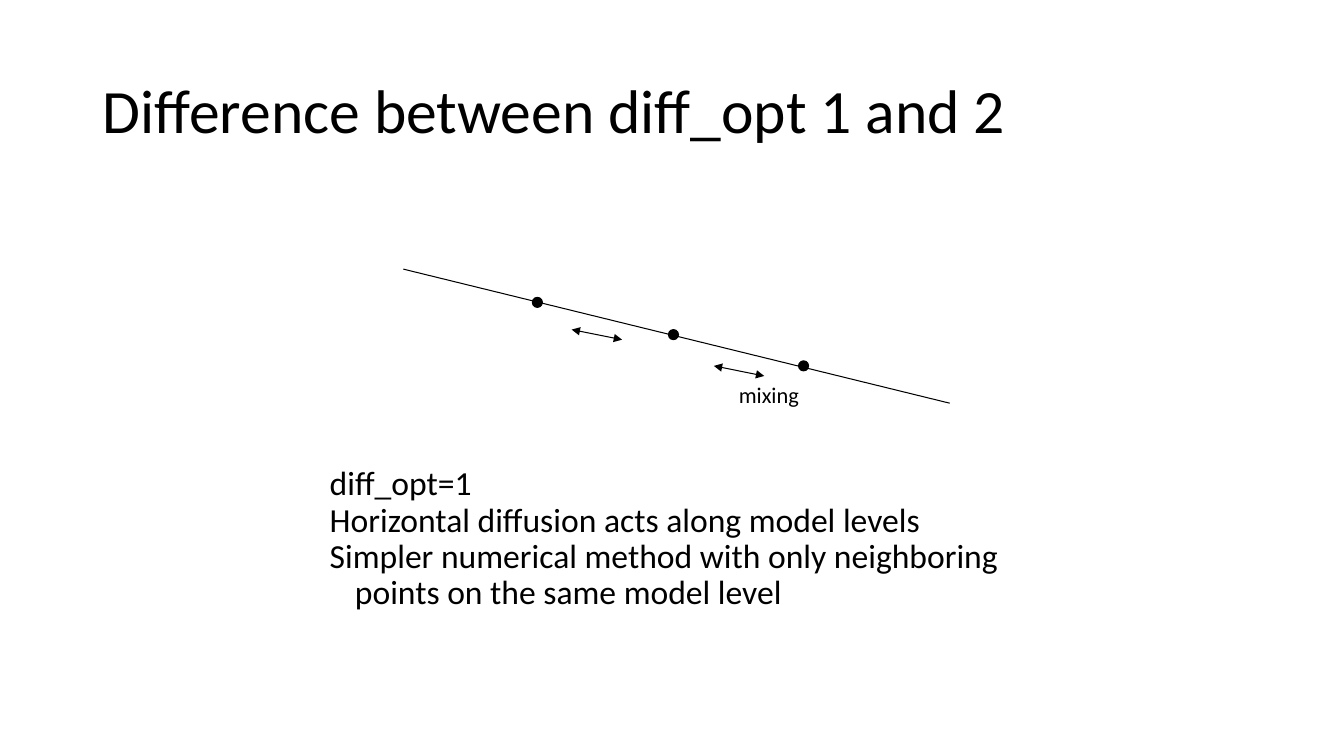
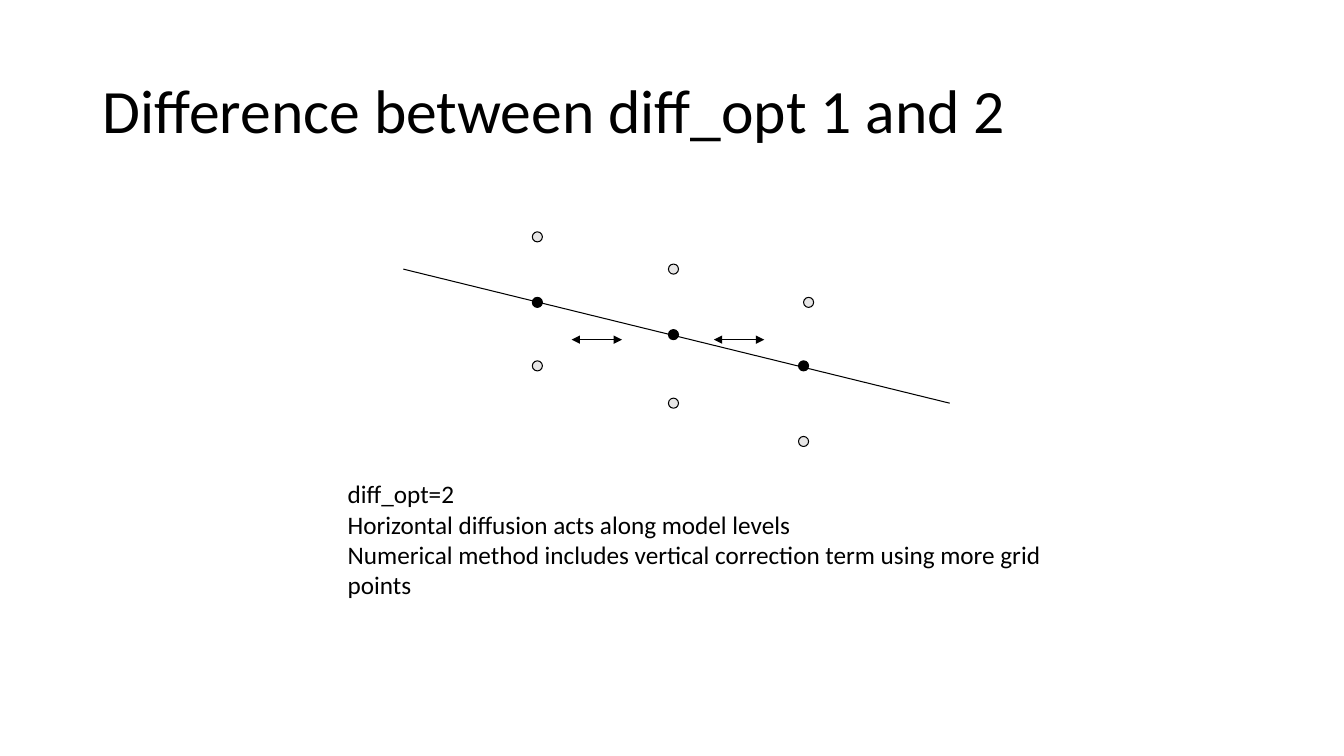
from dataclasses import dataclass

from lxml import etree
from pptx import Presentation, util as u
from pptx.dml.color import RGBColor
from pptx.enum import shapes, text
from pptx.oxml.ns import qn

PX = 9144  # EMU in one px, 100 px to the inch


@dataclass(frozen=True)
class Theme:
    font: str = "Calibri"
    ink: str = "000000"
    pale: str = "E7E6E6"
    title: int = 44
    body: int = 24
    note: int = 18
    label: int = 16
    line: float = 0.75
    tight: float = 0.9
    indent: int = 25


THEME = Theme()

# Content
TITLE = "Difference between diff_opt 1 and 2"
TITLE_BOX = (92, 40, 1150, 145)
LEVEL_LINE = (400, 267, 942, 400)
DOT = 10
LEVEL_POINTS = [(533, 300), (668, 332), (797, 363)]  # centres
EXTRA_POINTS = [(533, 235), (668, 267), (802, 300),
                (533, 363), (668, 400), (797, 438)]
ARROW_LEFTS, ARROW_WIDTH = (567, 708), 50

SLIDES = [
    dict(layout=1, arrow_tops=(327, 363), arrow_drop=10, extra=[],
         box=(317, 458, 767, 208),
         lines=["diff_opt=1",
                "Horizontal diffusion acts along model levels",
                "Simpler numerical method with only neighboring points "
                "on the same model level"],
         label=("mixing", (723, 373, 80, 37))),
    dict(layout=5, arrow_tops=(337, 337), arrow_drop=0, extra=EXTRA_POINTS,
         box=(335, 470, 769, 131),
         lines=["diff_opt=2",
                "Horizontal diffusion acts along model levels",
                "Numerical method includes vertical correction term "
                "using more grid points"],
         label=None),
]


def px(values):
    return [u.Emu(value * PX) for value in values]


def place(shape, box):
    shape.left, shape.top, shape.width, shape.height = px(box)
    return shape


def write(shape, lines, size, spacing=None, hanging=0, wrap=True,
          anchor=text.MSO_ANCHOR.TOP, fit=text.MSO_AUTO_SIZE.NONE):
    frame = shape.text_frame
    frame.word_wrap, frame.vertical_anchor, frame.auto_size = wrap, anchor, fit
    for number, line in enumerate(lines):
        para = frame.add_paragraph() if number else frame.paragraphs[0]
        para.alignment = text.PP_ALIGN.LEFT
        para.space_before = u.Pt(0)
        if spacing:
            para.line_spacing = spacing
        if hanging:
            props = para._p.get_or_add_pPr()
            props.set("marL", str(hanging * PX))
            props.set("indent", str(-hanging * PX))
            etree.SubElement(props, qn("a:buNone"))
        span = para.add_run()
        span.text = line
        span.font.name, span.font.size = THEME.font, u.Pt(size)
        span.font.color.rgb = RGBColor.from_string(THEME.ink)


def outline(shape):
    shape.line.color.rgb = RGBColor.from_string(THEME.ink)
    shape.line.width = u.Pt(THEME.line)


def add_line(slide, ends, arrows=False):
    line = slide.shapes.add_connector(shapes.MSO_CONNECTOR.STRAIGHT, *px(ends))
    outline(line)
    if arrows:
        for tag in ("a:headEnd", "a:tailEnd"):
            etree.SubElement(line.line._get_or_add_ln(), qn(tag), type="triangle")
    etree.SubElement(line._element.spPr, qn("a:effectLst"))


def add_dot(slide, centre, color):
    x, y = centre
    dot = slide.shapes.add_shape(
        shapes.MSO_SHAPE.OVAL, *px((x - DOT // 2, y - DOT // 2, DOT, DOT)))
    dot.shadow.inherit = False
    dot.fill.solid()
    dot.fill.fore_color.rgb = RGBColor.from_string(color)
    outline(dot)


def build(deck, item):
    slide = deck.slides.add_slide(deck.slide_layouts[item["layout"]])
    write(place(slide.shapes.title, TITLE_BOX), [TITLE], THEME.title,
          spacing=THEME.tight, anchor=text.MSO_ANCHOR.MIDDLE)

    # Model level, its grid points and the mixing arrows
    add_line(slide, LEVEL_LINE)
    for centre in LEVEL_POINTS:
        add_dot(slide, centre, THEME.ink)
    for left, top in zip(ARROW_LEFTS, item["arrow_tops"]):
        add_line(slide, (left, top, left + ARROW_WIDTH,
                         top + item["arrow_drop"]), arrows=True)
    for centre in item["extra"]:
        add_dot(slide, centre, THEME.pale)

    # Label and explanation
    grow = text.MSO_AUTO_SIZE.SHAPE_TO_FIT_TEXT
    if item["label"]:
        word, box = item["label"]
        write(slide.shapes.add_textbox(*px(box)), [word], THEME.label,
              wrap=False, fit=grow)
    if len(slide.placeholders) > 1:
        write(place(slide.placeholders[1], item["box"]), item["lines"],
              THEME.body, spacing=THEME.tight, hanging=THEME.indent)
    else:
        write(slide.shapes.add_textbox(*px(item["box"])), item["lines"],
              THEME.note, fit=grow)


def main():
    deck = Presentation()
    deck.slide_width, deck.slide_height = u.Inches(13.33), u.Inches(7.5)
    for item in SLIDES:
        build(deck, item)
    deck.save("out.pptx")


if __name__ == "__main__":
    main()
